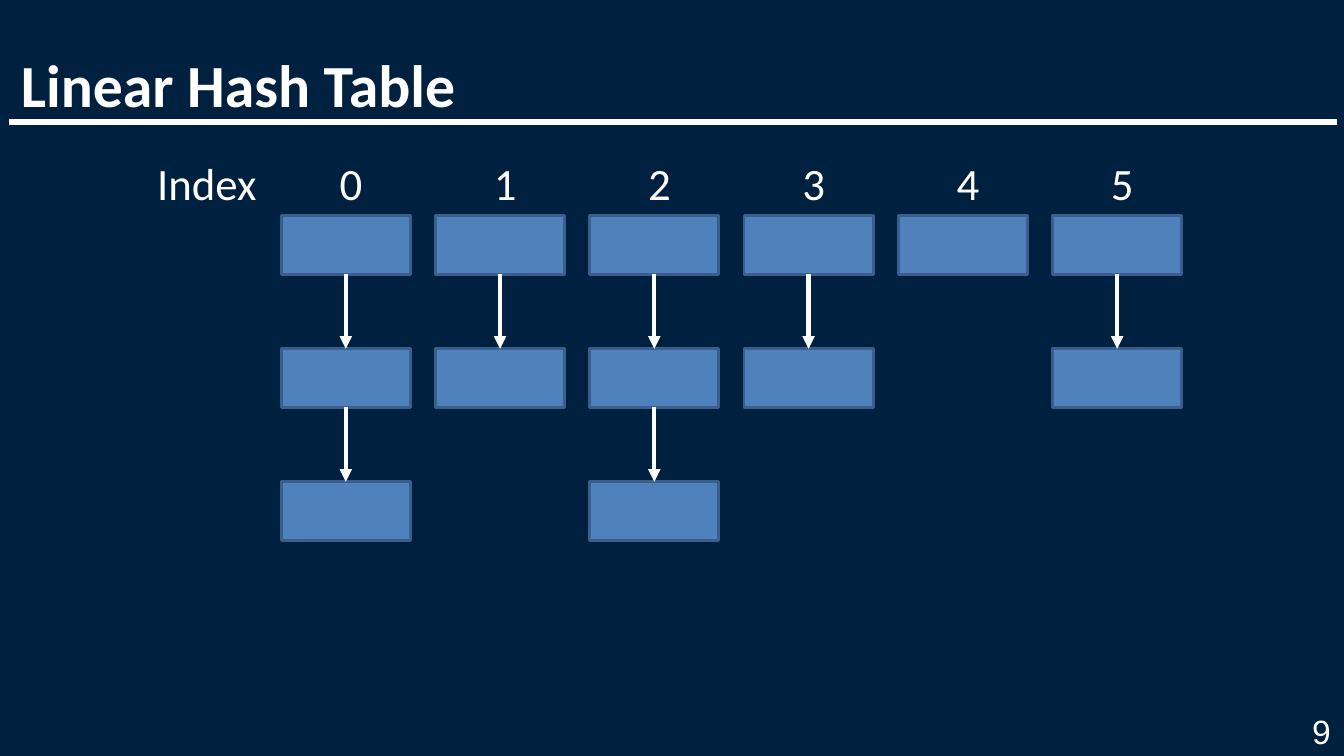
from dataclasses import dataclass

from lxml.etree import SubElement
from pptx import Presentation
from pptx.dml.color import RGBColor
from pptx.enum.shapes import MSO_CONNECTOR as Connector, MSO_SHAPE as Shape
from pptx.enum.text import MSO_ANCHOR as Anchor, PP_ALIGN as Align
from pptx.oxml.ns import qn
from pptx.util import Pt

EMU_PER_PX = 9144  # 100 px to the inch
BOTTOM, TOP = 2, 0

CHAIN_LENGTHS = [3, 2, 3, 2, 1, 2]
FIRST_LEFT, FIRST_TOP = 279, 214
BUCKET_WIDTH, BUCKET_HEIGHT = 128, 58
COLUMN_PITCH, ROW_PITCH = 153, 132
LABEL_TOP, LABEL_HEIGHT = 150, 64


@dataclass(frozen=True)
class Theme:
    background: RGBColor = RGBColor(0x00, 0x20, 0x40)
    foreground: RGBColor = RGBColor(0xFF, 0xFF, 0xFF)
    bucket_fill: RGBColor = RGBColor(0x4F, 0x81, 0xBD)
    bucket_line: RGBColor = RGBColor(0x3A, 0x5F, 0x8C)
    text_font: str = "Calibri"
    number_font: str = "Arial"
    title_size: float = 42.7
    label_size: float = 32
    number_size: float = 24
    rule_width: float = 3.75
    arrow_width: float = 3
    bucket_line_width: float = 2


THEME = Theme()


def px(*lengths):
    return [length * EMU_PER_PX for length in lengths]


def set_all(target, values):
    for name, value in values.items():
        setattr(target, name, value)


def add_text(slide, text, box, size, frame_format, paragraph_format=None,
             font=THEME.text_font, bold=False):
    frame = slide.shapes.add_textbox(*px(*box)).text_frame
    set_all(frame, frame_format)
    paragraph = frame.paragraphs[0]
    paragraph.text = text
    set_all(paragraph, paragraph_format or {})
    set_all(paragraph.font, {"name": font, "size": Pt(size), "bold": bold})
    paragraph.font.color.rgb = THEME.foreground


def add_label(slide, text, left, width):
    add_text(slide, text, (left, LABEL_TOP, width, LABEL_HEIGHT),
             THEME.label_size, {"word_wrap": False})


def add_line(slide, start, end, width):
    line = slide.shapes.add_connector(Connector.STRAIGHT, *px(*start, *end))
    line.line.color.rgb = THEME.foreground
    line.line.width = Pt(width)
    SubElement(line._element.spPr, qn("a:effectLst"))
    return line


def add_arrow(slide, upper, lower):
    """Point from the bottom of one bucket to the top of the next."""
    arrow = add_line(slide, (0, 0), (0, 0), THEME.arrow_width)
    arrow.begin_connect(upper, BOTTOM)
    arrow.end_connect(lower, TOP)
    SubElement(arrow.line._get_or_add_ln(), qn("a:tailEnd"), type="triangle")


def add_bucket(slide, left, top):
    bucket = slide.shapes.add_shape(
        Shape.RECTANGLE, *px(left, top, BUCKET_WIDTH, BUCKET_HEIGHT))
    bucket.shadow.inherit = False
    bucket.fill.solid()
    bucket.fill.fore_color.rgb = THEME.bucket_fill
    bucket.line.color.rgb = THEME.bucket_line
    bucket.line.width = Pt(THEME.bucket_line_width)
    return bucket


def add_chain(slide, index, length):
    """Draw one column: its index, its buckets and the arrows between them."""
    left = FIRST_LEFT + index * COLUMN_PITCH
    add_label(slide, str(index), left + 48, 43)
    buckets = [add_bucket(slide, left, FIRST_TOP + row * ROW_PITCH)
               for row in range(length)]
    for upper, lower in zip(buckets, buckets[1:]):
        add_arrow(slide, upper, lower)


def add_page_frame(slide):
    """Draw the title, the rule under it and the page number."""
    add_line(slide, (9, 121), (1326, 121), THEME.rule_width)
    add_text(slide, "Linear Hash Table", (11, 0, 1311, 119), THEME.title_size,
             {"word_wrap": True, "vertical_anchor": Anchor.BOTTOM,
              "margin_top": 0, "margin_bottom": 0},
             {"line_spacing": 0.89}, bold=True)
    add_text(slide, "9", (1276, 705, 44, 28), THEME.number_size,
             {"word_wrap": True, "margin_left": 0, "margin_right": 0,
              "margin_top": 0, "margin_bottom": 0},
             {"alignment": Align.RIGHT}, font=THEME.number_font)


def main():
    presentation = Presentation()
    width, height = px(1333, 750)
    set_all(presentation, {"slide_width": width, "slide_height": height})
    slide = presentation.slides.add_slide(presentation.slide_layouts[6])
    slide.background.fill.solid()
    slide.background.fill.fore_color.rgb = THEME.background

    add_page_frame(slide)
    add_label(slide, "Index", 146, 120)
    for index, length in enumerate(CHAIN_LENGTHS):
        add_chain(slide, index, length)
    presentation.save("out.pptx")


if __name__ == "__main__":
    main()
